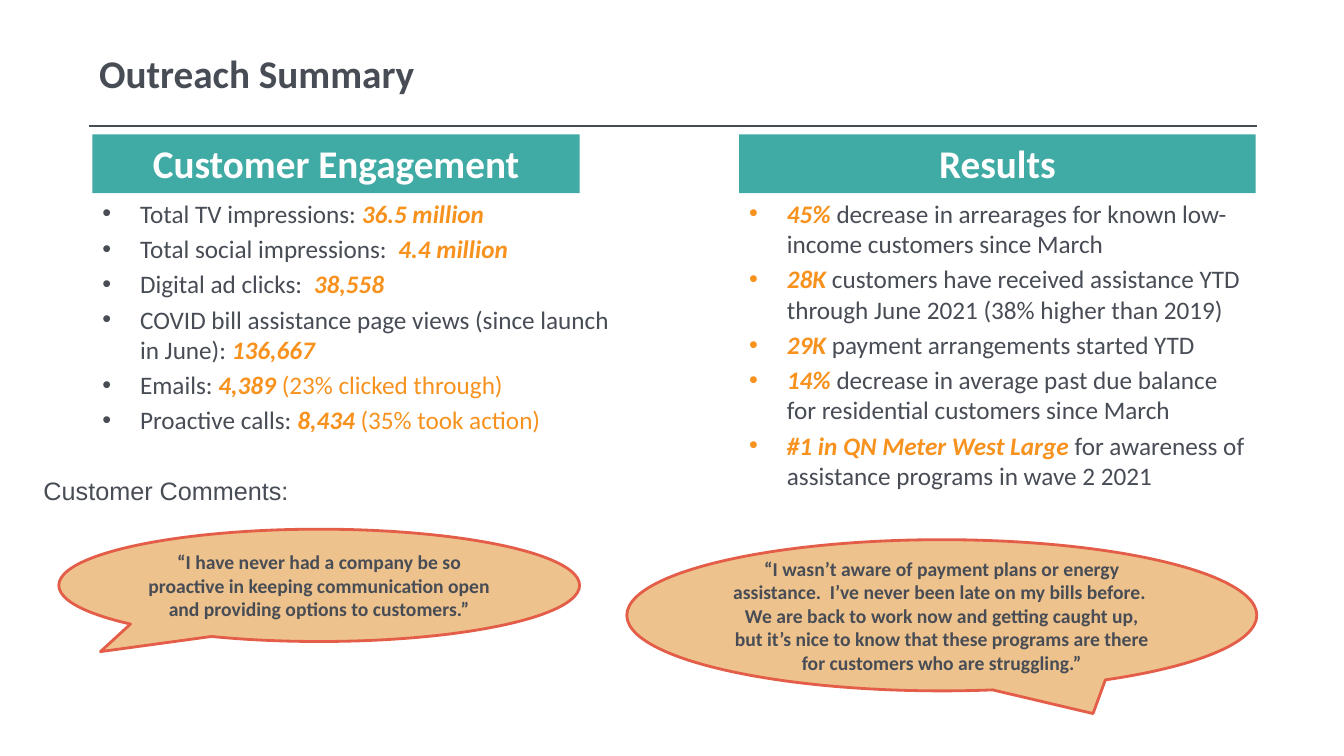
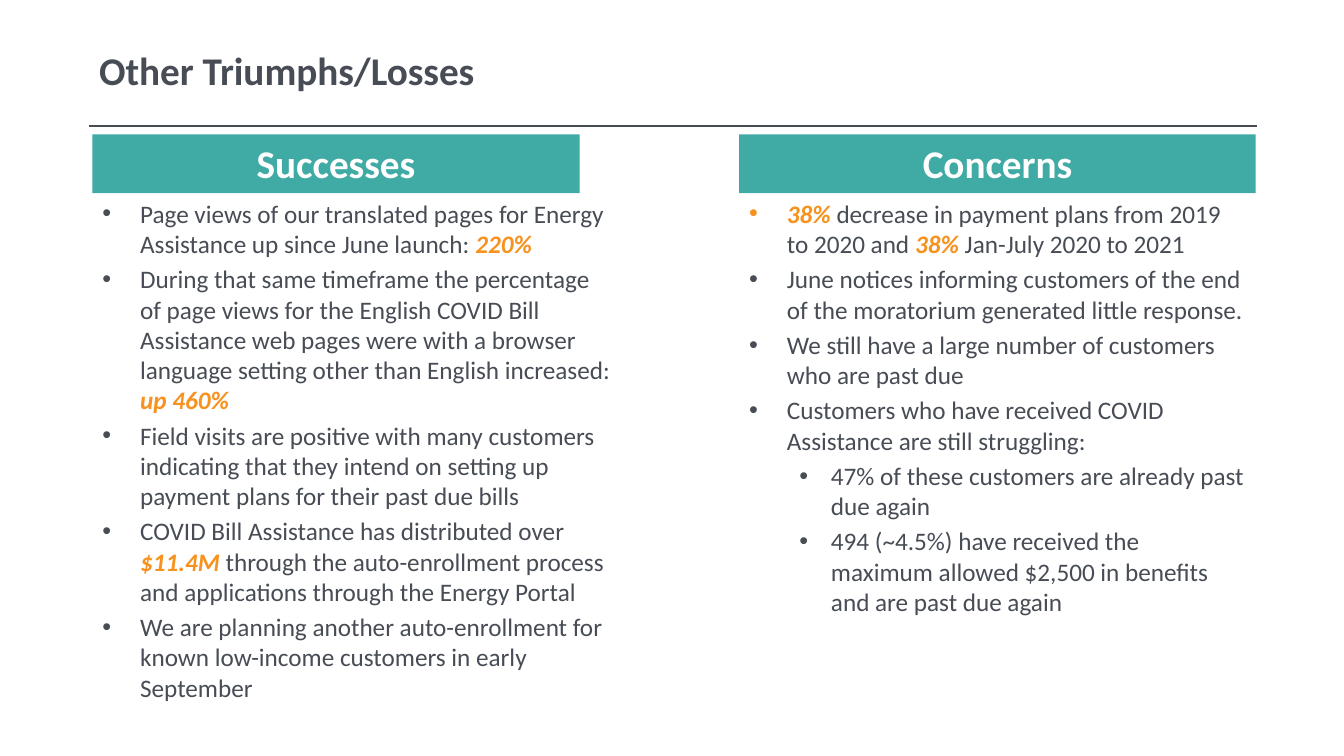
"""Build two outreach slides with headed bullet columns and customer comments."""
from lxml import etree
from pptx import Presentation
from pptx import util as u
from pptx.dml.color import RGBColor
from pptx.enum import shapes, text
from pptx.oxml.ns import qn

PX = 9525
SLATE = RGBColor(0x47, 0x4C, 0x55)
ORANGE = RGBColor(0xF7, 0x92, 0x1E)
TEAL = RGBColor(0x40, 0xAA, 0xA4)
SAND = RGBColor(0xEE, 0xC2, 0x8D)
CORAL = RGBColor(0xE4, 0x5D, 0x48)
WHITE = RGBColor(0xFF, 0xFF, 0xFF)

PLAIN = (SLATE, False)
STRONG = (ORANGE, True)
ACCENT = (ORANGE, False)

BULLET_INDENTS = [(36, 36), (78, 30)]
COLUMNS = [
    {"left": 88, "heading_width": 464, "body_width": 506, "body_height": 464},
    {"left": 704, "heading_width": 492, "body_width": 493, "body_height": 416},
]

SLIDES = [
    ("Outreach Summary", 32, [
        ("Customer Engagement", [
            (0, [("Total TV impressions: ", PLAIN), ("36.5 million", STRONG)]),
            (0, [("Total social impressions:  ", PLAIN), ("4.4 million", STRONG)]),
            (0, [("Digital ad clicks:  ", PLAIN), ("38,558", STRONG)]),
            (0, [("COVID bill assistance page views (since launch in June): ", PLAIN),
                 ("136,667", STRONG)]),
            (0, [("Emails: ", PLAIN), ("4,389 ", STRONG), ("(23% clicked through)", ACCENT)]),
            (0, [("Proactive calls: ", PLAIN), ("8,434 ", STRONG),
                 ("(35% took action)", ACCENT)]),
        ]),
        ("Results", [
            (0, [("45% ", STRONG),
                 ("decrease in arrearages for known low-income customers since March", PLAIN)]),
            (0, [("28K ", STRONG),
                 ("customers have received assistance YTD through June 2021 "
                  "(38% higher than 2019)", PLAIN)]),
            (0, [("29K", STRONG), (" payment arrangements started YTD", PLAIN)]),
            (0, [("14% ", STRONG),
                 ("decrease in average past due balance for residential customers "
                  "since March", PLAIN)]),
            (0, [("#1 in QN Meter West Large ", STRONG),
                 ("for awareness of assistance programs in wave 2 2021", PLAIN)]),
        ]),
    ]),
    ("Other Triumphs/Losses", 29, [
        ("Successes", [
            (0, [("Page views of our translated pages for Energy Assistance up since "
                  "June launch: ", PLAIN), ("220%", STRONG)]),
            (0, [("During that same timeframe the percentage of page views for the English "
                  "COVID Bill Assistance web pages were with a browser language setting "
                  "other than English increased: ", PLAIN), ("up 460%", STRONG)]),
            (0, [("Field visits are positive with many customers indicating that they "
                  "intend on setting up payment plans for their past due bills", PLAIN)]),
            (0, [("COVID Bill Assistance has distributed over ", PLAIN), ("$11.4M ", STRONG),
                 ("through the auto-enrollment process and applications through the "
                  "Energy Portal", PLAIN)]),
            (0, [("We are planning another auto-enrollment for known low-income customers "
                  "in early September", PLAIN)]),
        ]),
        ("Concerns", [
            (0, [("38% ", STRONG), ("decrease in payment plans from 2019 to 2020 and ", PLAIN),
                 ("38%", STRONG), (" Jan-July 2020 to 2021", PLAIN)]),
            (0, [("June notices informing customers of the end of the moratorium generated "
                  "little response.", PLAIN)]),
            (0, [("We still have a large number of customers who are past due", PLAIN)]),
            (0, [("Customers who have received COVID Assistance are still struggling:", PLAIN)]),
            (1, [("47% of these customers are already past due again", PLAIN)]),
            (1, [("494 (~4.5%) have received the maximum allowed $2,500 in benefits and are "
                  "past due again", PLAIN)]),
        ]),
    ]),
]

CALLOUTS = [
    ((56, 504, 496, 107), (-0.42, 0.59),
     "“I have never had a company be so proactive in keeping communication open and "
     "providing options to customers.”"),
    ((597, 514, 600, 144), (0.24, 0.65),
     "“I wasn’t aware of payment plans or energy assistance.  I’ve never been late on my "
     "bills before.  We are back to work now and getting caught up, but it’s nice to know "
     "that these programs are there for customers who are struggling.”"),
]


def add_box(slide, box, preset=None, fill=None):
    """Add a wrapped text box, or a filled preset shape, at a box given in px."""
    lengths = [length * PX for length in box]
    if preset is None:
        shape = slide.shapes.add_textbox(*lengths)
    else:
        shape = slide.shapes.add_shape(preset, *lengths)
        shape.shadow.inherit = False
        shape.fill.solid()
        shape.fill.fore_color.rgb = fill
        shape.line.fill.background()
    shape.text_frame.word_wrap = True
    return shape


def write(shape, wording, size, color, bold=True, name="Calibri",
          align=text.PP_ALIGN.LEFT, anchor=text.MSO_ANCHOR.MIDDLE):
    """Write one paragraph in one style."""
    shape.text_frame.text = wording
    shape.text_frame.vertical_anchor = anchor
    paragraph = shape.text_frame.paragraphs[0]
    paragraph.alignment = align
    font = paragraph.runs[0].font
    font.name, font.size, font.bold = name, u.Pt(size), bold
    font.color.rgb = color


presentation = Presentation()
presentation.slide_width = 1280 * PX
presentation.slide_height = 720 * PX

for title, title_top, columns in SLIDES:
    slide = presentation.slides.add_slide(presentation.slide_layouts[6])
    rule = slide.shapes.add_connector(
        shapes.MSO_CONNECTOR.STRAIGHT, 85 * PX, 120 * PX, 1197 * PX, 120 * PX)
    rule.line.color.rgb = SLATE
    rule.line.width = u.Pt(0.75)
    etree.SubElement(rule._element.spPr, qn("a:effectLst"))
    write(add_box(slide, (85, title_top, 1112, 75)), title, 28, SLATE)

    for column, (heading, bullets) in zip(COLUMNS, columns):
        body = add_box(slide, (column["left"], 184, column["body_width"], column["body_height"]))
        for index, (level, runs) in enumerate(bullets):
            frame = body.text_frame
            paragraph = frame.add_paragraph() if index else frame.paragraphs[0]
            paragraph.level = level
            if index:
                paragraph.space_before = u.Pt(3.6)
            margin, hanging = BULLET_INDENTS[level]
            properties = paragraph._p.get_or_add_pPr()
            properties.set("marL", str(margin * PX))
            properties.set("indent", str(-hanging * PX))
            etree.SubElement(properties, qn("a:buFont"), typeface="Arial")
            etree.SubElement(properties, qn("a:buChar"), char="•")
            for wording, (color, strong) in runs:
                run = paragraph.add_run()
                run.text = wording
                run.font.name, run.font.size = "Calibri", u.Pt(18)
                run.font.bold = run.font.italic = strong
                run.font.color.rgb = color
        band = add_box(slide, (column["left"], 128, column["heading_width"], 56),
                       shapes.MSO_SHAPE.RECTANGLE, TEAL)
        write(band, heading, 28, WHITE, align=text.PP_ALIGN.CENTER, anchor=text.MSO_ANCHOR.TOP)

summary = presentation.slides[0]
for box, pointer, quote in CALLOUTS:
    callout = add_box(summary, box, shapes.MSO_SHAPE.OVAL_CALLOUT, SAND)
    callout.adjustments[0], callout.adjustments[1] = pointer
    callout.line.color.rgb = CORAL
    callout.line.width = u.Pt(2)
    write(callout, quote, 14, SLATE, align=text.PP_ALIGN.CENTER)
write(add_box(summary, (32, 448, 384, 38)), "Customer Comments:", 18, SLATE,
      bold=False, name="Arial", anchor=text.MSO_ANCHOR.TOP)

presentation.save("out.pptx")
